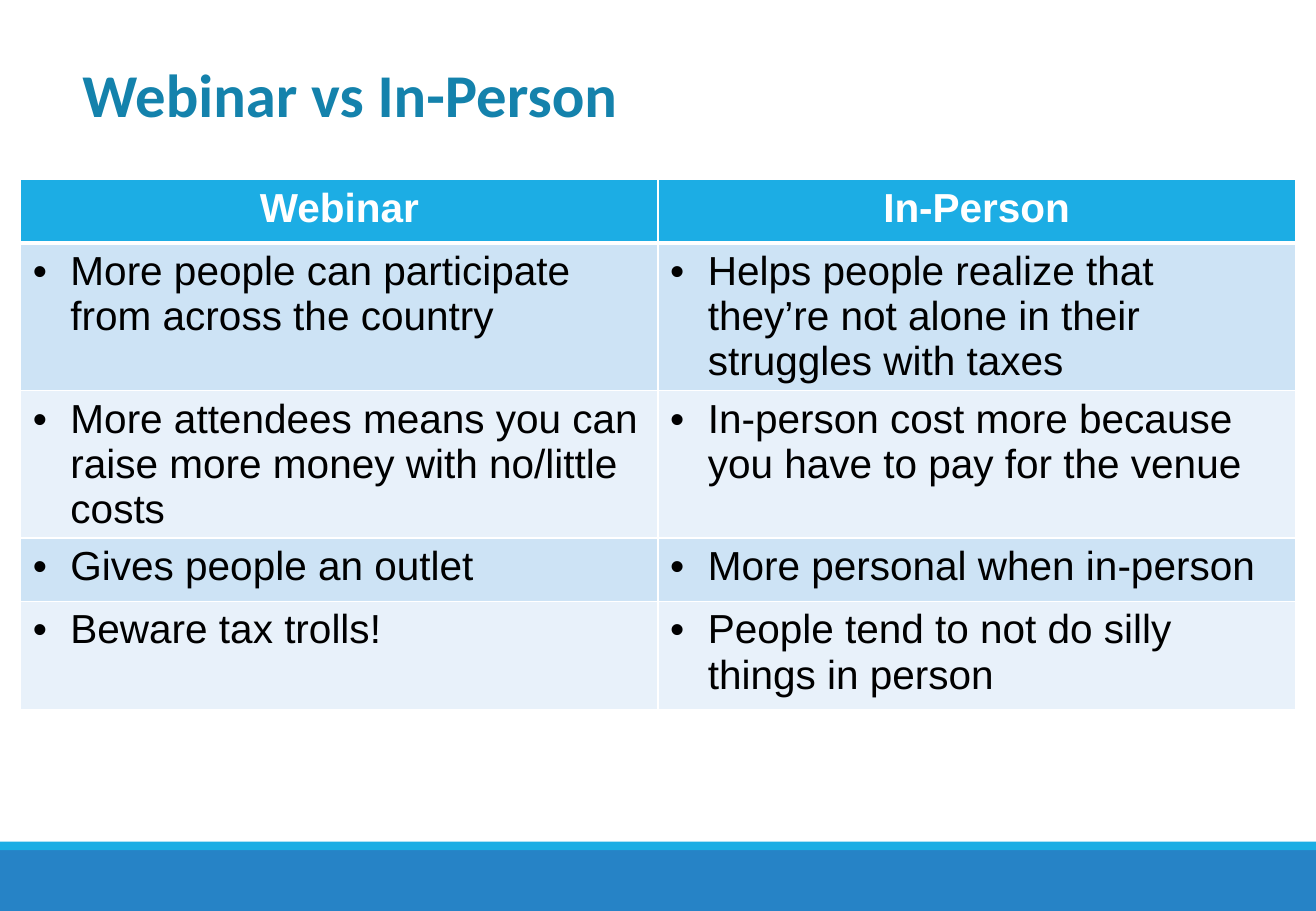
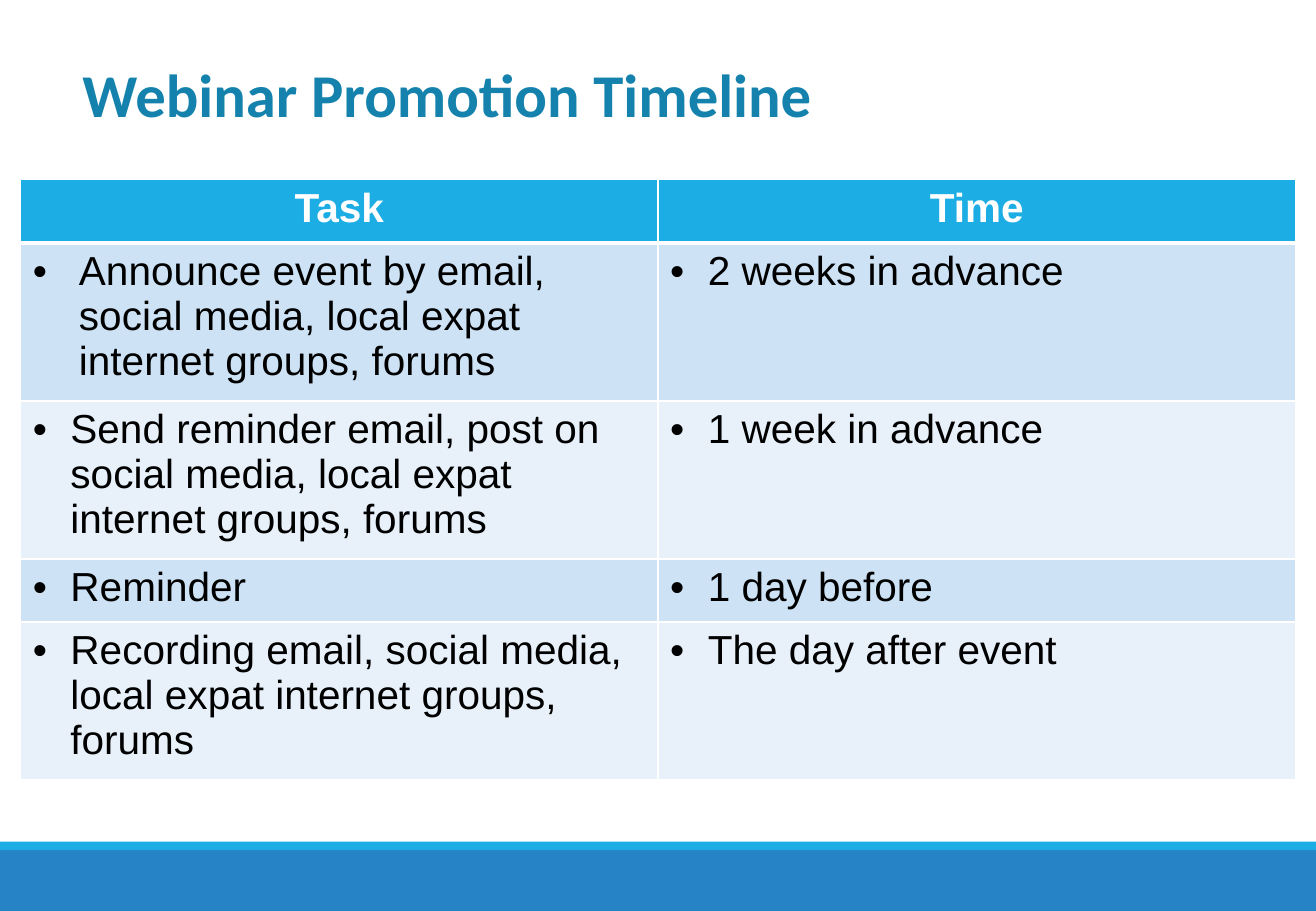
import pptx
import pptx.util
import pptx.dml.color
import pptx.enum.shapes
import pptx.enum.text
import pptx.oxml
import pptx.oxml.ns
import lxml.etree

Inches, Pt = pptx.util.Inches, pptx.util.Pt
RGB = pptx.dml.color.RGBColor.from_string
ALIGN = pptx.enum.text.PP_ALIGN
WIDE, HIGH = 10.83, 7.5

HUES = {"title": "1482AC", "head": "1CADE4", "band": "2683C6",
        "odd": "CDE3F5", "even": "E8F1FA", "text": "000000", "line": "FFFFFF"}

FONTS = {
    "title": {"name": "Calibri", "size": Pt(36), "bold": True},
    "head": {"name": "Arial", "size": Pt(24), "bold": True},
    "text": {"name": "Arial", "size": Pt(24), "bold": False},
}

BANDS = [("band", 7, 0.5), ("head", 6.93, 0.07)]  # hue, top, height

INDENT = 0.31

SLIDES = [
    {
        "title": "Webinar vs In-Person", "width": 5.46,
        "heights": [0.52, 1.21, 1.21, 0.52, 0.89], "indents": {},
        "rows": [
            ("Webinar", "In-Person"),
            ("More people can participate from across the country",
             "Helps people realize that they’re not alone in their struggles with taxes"),
            ("More attendees means you can raise more money with no/little costs",
             "In-person cost more because you have to pay for the venue"),
            ("Gives people an outlet", "More personal when in-person"),
            ("Beware tax trolls!", "People tend to not do silly things in person"),
        ],
    },
    {
        "title": "Webinar Promotion Timeline", "width": 7.91,
        "heights": [0.52, 1.3, 1.3, 0.52, 1.3], "indents": {(1, 0): 0.38},
        "rows": [
            ("Task", "Time"),
            ("Announce event by email, social media, local expat internet groups, forums",
             "2 weeks in advance"),
            ("Send reminder email, post on social media, local expat internet groups, forums",
             "1 week in advance"),
            ("Reminder", "1 day before"),
            ("Recording email, social media, local expat internet groups, forums",
             "The day after event"),
        ],
    },
]


def style(para, kind, hue):
    for key, value in FONTS[kind].items():
        setattr(para.font, key, value)
    para.font.color.rgb = RGB(HUES[hue])


def edge(cell, row):
    """Draw the cell's white borders, with a heavy rule under the header row."""
    props = cell._tc.get_or_add_tcPr()
    widths = {"lnL": 1, "lnR": 1, "lnT": 3 if row == 1 else 1, "lnB": 3 if row == 0 else 1}
    for spot, (tag, width) in enumerate(widths.items()):
        line = pptx.oxml.parse_xml(
            f'<a:{tag} {pptx.oxml.ns.nsdecls("a")} w="{Pt(width)}"><a:solidFill>'
            f'<a:srgbClr val="{HUES["line"]}"/></a:solidFill></a:{tag}>')
        props.insert(spot, line)


deck = pptx.Presentation()
deck.slide_width, deck.slide_height = Inches(WIDE), Inches(HIGH)

for page in SLIDES:
    slide = deck.slides.add_slide(deck.slide_layouts[6])

    for hue, top, height in BANDS:
        band = slide.shapes.add_shape(pptx.enum.shapes.MSO_SHAPE.RECTANGLE,
                                      0, Inches(top), Inches(WIDE), Inches(height))
        band.shadow.inherit = False
        band.fill.solid()
        band.fill.fore_color.rgb = RGB(HUES[hue])
        band.line.fill.background()

    frame = slide.shapes.add_table(
        len(page["rows"]), 2, Inches(0.17), Inches(1.48),
        Inches(10.49), Inches(sum(page["heights"])))
    table = frame.table
    table.first_row = table.horz_banding = False
    for row, texts in enumerate(page["rows"]):
        table.rows[row].height = Inches(page["heights"][row])
        fill = "head" if row == 0 else "odd" if row % 2 else "even"
        for col, text in enumerate(texts):
            cell = table.cell(row, col)
            cell.fill.solid()
            cell.fill.fore_color.rgb = RGB(HUES[fill])
            edge(cell, row)
            cell.text = text
            para = cell.text_frame.paragraphs[0]
            if row == 0:
                para.alignment = ALIGN.CENTER
                style(para, "head", "line")
            else:
                indent = Inches(page["indents"].get((row, col), INDENT))
                props = para._p.get_or_add_pPr()
                props.set("marL", str(indent))
                props.set("indent", str(-indent))
                for tag, key, value in [("a:buFont", "typeface", "Arial"),
                                        ("a:buChar", "char", "•")]:
                    lxml.etree.SubElement(props, pptx.oxml.ns.qn(tag)).set(key, value)
                style(para, "text", "text")

    title = slide.shapes.add_textbox(Inches(0.58), Inches(0.42),
                                     Inches(page["width"]), Inches(0.72)).text_frame
    title.word_wrap = True
    title.text = page["title"]
    style(title.paragraphs[0], "title", "title")

deck.save("out.pptx")
